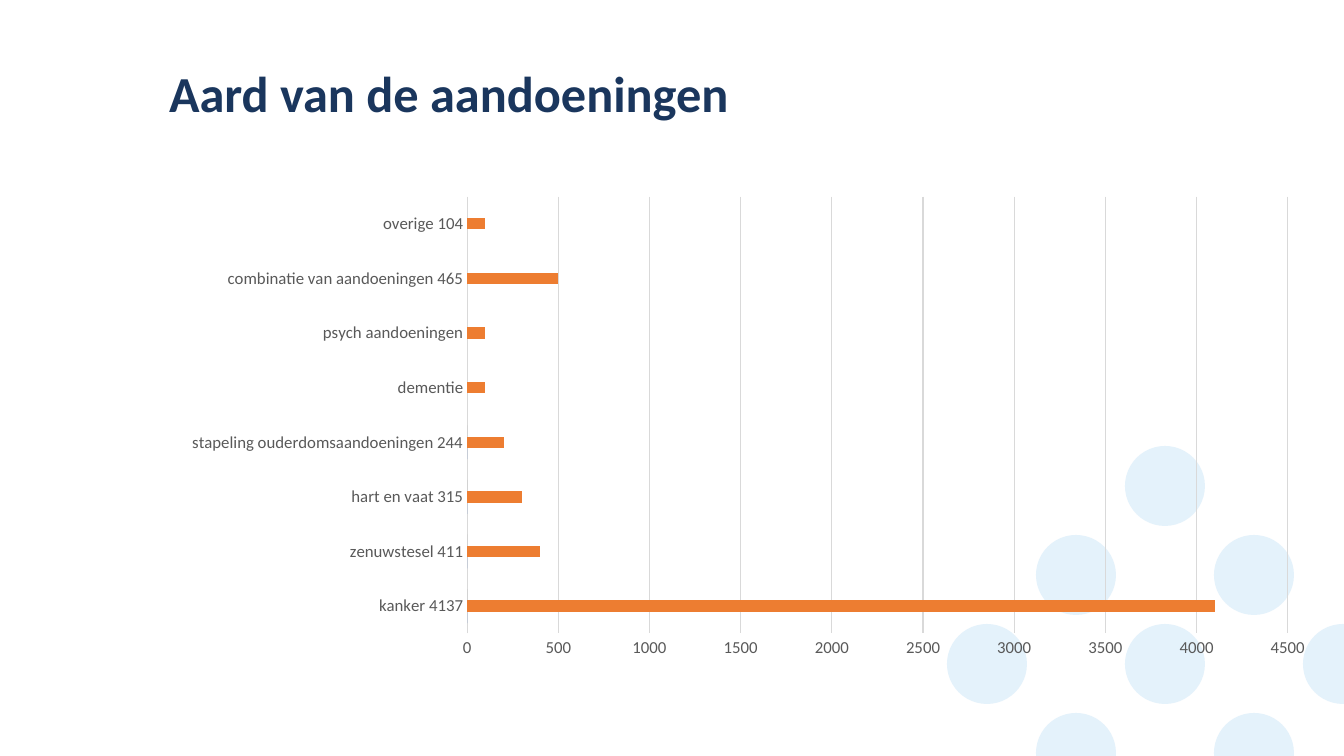
from dataclasses import dataclass

from lxml.etree import SubElement
from pptx import Presentation
from pptx.chart.data import CategoryChartData as ChartData
from pptx.dml.color import RGBColor as RGB
from pptx.enum.chart import XL_CHART_TYPE as Kind, XL_TICK_MARK as Tick
from pptx.enum.shapes import MSO_SHAPE as Shape
from pptx.enum.text import MSO_ANCHOR as Anchor, PP_ALIGN as Align
from pptx.oxml.ns import qn
from pptx.util import Pt

PX = 914400 / 100.8


@dataclass(frozen=True)
class Theme:
    font: str = "Calibri"
    title: str = "1A365D"
    label: str = "595959"
    grid: str = "D9D9D9"
    dot: str = "A8D5F4"
    bars: tuple = ("4472C4", "ED7D31", "A5A5A5")
    title_size: int = 36
    label_size: int = 12


THEME = Theme()

# Bar lengths, rounded to hundreds
CAUSES = {
    "kanker 4137": 4100,
    "zenuwstesel 411": 400,
    "hart en vaat 315": 300,
    "stapeling ouderdomsaandoeningen 244": 200,
    "dementie": 100,
    "psych aandoeningen": 100,
    "combinatie van aandoeningen 465": 500,
    "overige 104": 100,
}
ZEROS = [0] * 4 + [None] * 4

# Columns filled in each row of the dot lattice
DOT_ROWS = ((2,), (1, 3), (0, 2, 4), (1, 3))
DOT_LEFT, DOT_TOP, DOT_STEP, DOT_SIZE = 947, 446, 89, 80


def px(*sizes):
    return [round(size * PX) for size in sizes]


def set_font(font, size, color, bold=False):
    font.name = THEME.font
    font.size = Pt(size)
    font.bold = bold
    font.color.rgb = RGB.from_string(color)


def set_line(line, color):
    line.color.rgb = RGB.from_string(color)
    line.width = Pt(0.75)


def add_dot(slide, left, top):
    dot = slide.shapes.add_shape(Shape.OVAL, *px(left, top, DOT_SIZE, DOT_SIZE))
    dot.shadow.inherit = False
    dot.line.fill.background()
    dot.fill.solid()
    dot.fill.fore_color.rgb = RGB.from_string(THEME.dot)
    color = dot.fill._xPr.find(f".//{qn('a:srgbClr')}")
    SubElement(color, qn("a:alpha"), val="30000")


def add_dots(slide):
    for row, cols in enumerate(DOT_ROWS):
        for col in cols:
            add_dot(slide, DOT_LEFT + col * DOT_STEP, DOT_TOP + row * DOT_STEP)


def set_title(slide, text):
    title = slide.shapes.title
    title.left, title.top, title.width, title.height = px(169, 69, 1159, 117)
    frame = title.text_frame
    frame.margin_left = frame.margin_top = 0
    frame.margin_right = frame.margin_bottom = 0
    frame.vertical_anchor = Anchor.TOP
    frame.word_wrap = True
    frame.text = text
    para = frame.paragraphs[0]
    para.alignment = Align.LEFT
    para.line_spacing = 0.9
    set_font(para.font, THEME.title_size, THEME.title, bold=True)


def style_axis(axis):
    axis.major_tick_mark = axis.minor_tick_mark = Tick.NONE
    set_font(axis.tick_labels.font, THEME.label_size, THEME.label)


def add_bars(slide):
    data = ChartData()
    data.categories = list(CAUSES)
    rows = (ZEROS, list(CAUSES.values()), ZEROS)
    for num, row in enumerate(rows, 1):
        data.add_series(f"Series {num}", row)
    frame = slide.shapes.add_chart(
        Kind.BAR_CLUSTERED, *px(169, 187, 1159, 480), data)
    chart = frame.chart
    chart.has_legend = chart.has_title = False
    set_font(chart.font, THEME.label_size, THEME.label)

    plot = chart.plots[0]
    plot.gap_width = 182
    plot.vary_by_categories = False
    for series, color in zip(plot.series, THEME.bars):
        series.format.fill.solid()
        series.format.fill.fore_color.rgb = RGB.from_string(color)

    names, scale = chart.category_axis, chart.value_axis
    for axis in (names, scale):
        style_axis(axis)
    set_line(names.format.line, THEME.grid)
    scale.format.line.fill.background()
    scale.minimum_scale, scale.maximum_scale = 0, 4500
    scale.major_unit = 500
    scale.has_major_gridlines = True
    set_line(scale.major_gridlines.format.line, THEME.grid)


def main():
    deck = Presentation()
    deck.slide_width, deck.slide_height = px(1344, 756)
    slide = deck.slides.add_slide(deck.slide_layouts[5])
    add_dots(slide)
    set_title(slide, "Aard van de aandoeningen")
    add_bars(slide)
    deck.save("out.pptx")


if __name__ == "__main__":
    main()
